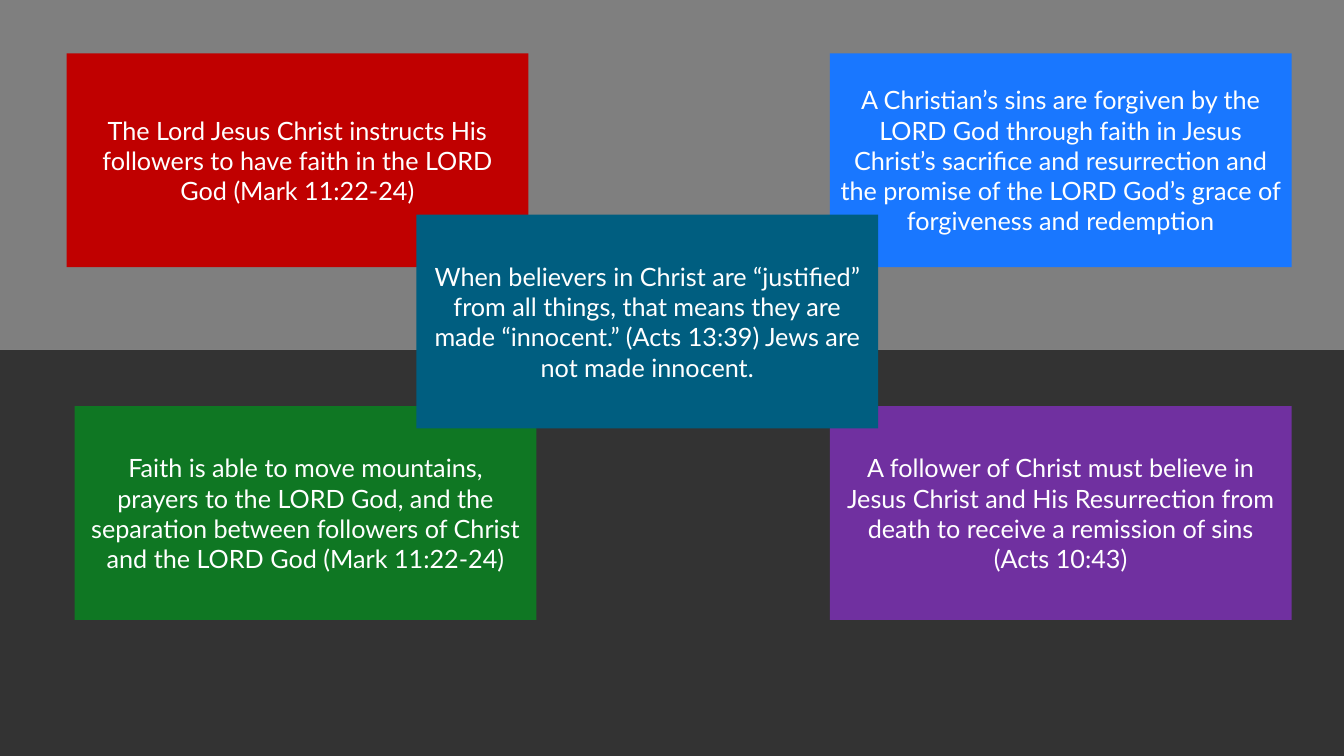
from pptx import Presentation
from pptx.dml.color import RGBColor
from pptx.enum.shapes import MSO_SHAPE
from pptx.enum.text import MSO_ANCHOR, PP_ALIGN
from pptx.util import Inches, Pt

GREY = RGBColor(0x7F, 0x7F, 0x7F)
CHARCOAL = RGBColor(0x33, 0x33, 0x33)
RED = RGBColor(0xC0, 0x00, 0x00)
GREEN = RGBColor(0x0F, 0x77, 0x23)
BLUE = RGBColor(0x19, 0x77, 0xFF)
PURPLE = RGBColor(0x70, 0x30, 0xA0)
TEAL = RGBColor(0x00, 0x5E, 0x80)
WHITE = RGBColor(0xFF, 0xFF, 0xFF)

SLIDE_W, SLIDE_H = 13.33, 7.5
BAND_SPLIT = 3.47
CARD_W, CARD_H = 4.58, 2.12
TOP_ROW, BOTTOM_ROW = 0.53, 4.03
RIGHT_COL = 8.23

prs = Presentation()
prs.slide_width = Inches(SLIDE_W)
prs.slide_height = Inches(SLIDE_H)
s = prs.slides.add_slide(prs.slide_layouts[6])


def add_box(*lines, left, top, width=CARD_W, height=CARD_H, fill, size=18, font="Lato", color=WHITE):
    sp = s.shapes.add_shape(
        MSO_SHAPE.RECTANGLE, Inches(left), Inches(top), Inches(width), Inches(height)
    )
    sp.shadow.inherit = False
    sp.fill.solid()
    sp.fill.fore_color.rgb = fill
    sp.line.fill.background()
    tf = sp.text_frame
    tf.word_wrap = True
    tf.vertical_anchor = MSO_ANCHOR.MIDDLE
    for i, line in enumerate(lines):
        p = tf.add_paragraph() if i else tf.paragraphs[0]
        p.alignment = PP_ALIGN.CENTER
        r = p.add_run()
        r.text = line
        r.font.name = font
        r.font.size = Pt(size)
        r.font.color.rgb = color


add_box(left=0, top=0, width=SLIDE_W, height=BAND_SPLIT, fill=GREY)
add_box(left=0, top=BAND_SPLIT, width=SLIDE_W, height=SLIDE_H - BAND_SPLIT, fill=CHARCOAL)

cards = [
    (0.66, TOP_ROW, RED, [
        "The Lord Jesus Christ instructs His followers to have faith in the LORD God (Mark 11:22-24)",
    ]),
    (0.74, BOTTOM_ROW, GREEN, [
        "Faith is able to move mountains,",
        "prayers to the LORD God, and the separation between followers of Christ "
        "and the LORD God (Mark 11:22-24)",
    ]),
    (RIGHT_COL, TOP_ROW, BLUE, [
        "A Christian’s sins are forgiven by the LORD God through faith in Jesus Christ’s sacrifice "
        "and resurrection and the promise of the LORD God’s grace of forgiveness and redemption",
    ]),
    (RIGHT_COL, BOTTOM_ROW, PURPLE, [
        "A follower of Christ must believe in Jesus Christ and His Resurrection from death "
        "to receive a remission of sins (Acts 10:43)",
    ]),
    (4.13, 2.13, TEAL, [
        "When believers in Christ are “justified” from all things, that means they are "
        "made “innocent.” (Acts 13:39) Jews are not made innocent.",
    ]),
]
for left, top, fill, lines in cards:
    add_box(*lines, left=left, top=top, fill=fill)

prs.save("out.pptx")
